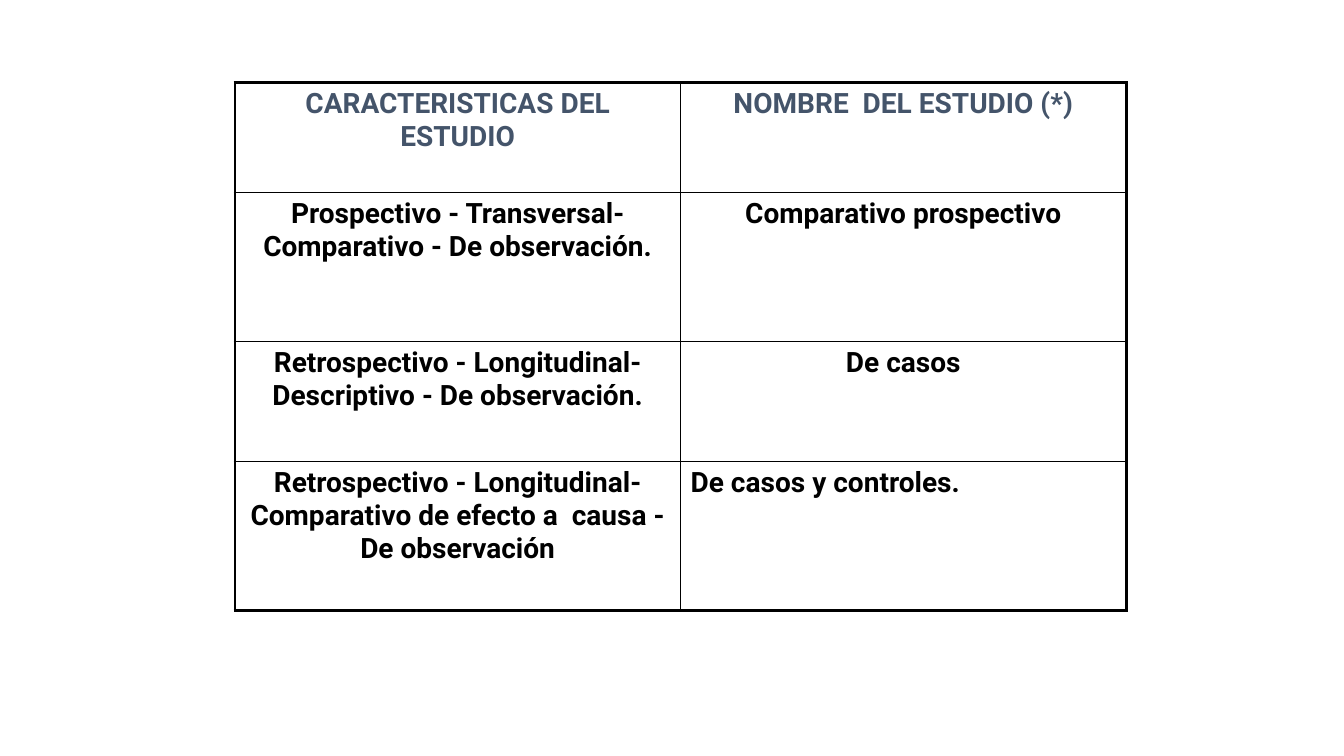
from dataclasses import dataclass

from lxml.etree import SubElement
from pptx import Presentation
from pptx.dml.color import RGBColor
from pptx.enum.text import PP_ALIGN
from pptx.oxml.ns import qn
from pptx.util import Inches, Pt

STUDIES = [
    ("CARACTERISTICAS DEL ESTUDIO", "NOMBRE  DEL ESTUDIO (*)"),
    ("Prospectivo - Transversal-Comparativo - De observación.", "Comparativo prospectivo"),
    ("Retrospectivo - Longitudinal-Descriptivo - De observación.", "De casos"),
    ("Retrospectivo - Longitudinal- Comparativo de efecto a  causa - De observación",
     "De casos y controles."),
]
ROW_HEIGHTS = [1.09, 1.48, 1.19, 1.48]
COLUMN_WIDTH = 4.42
TABLE_LEFT, TABLE_TOP = 2.33, 0.82


@dataclass(frozen=True)
class Theme:
    font: str = "Roboto"
    text_size: float = 20
    header: str = "44546A"
    ink: str = "000000"
    outer_line: float = 2.25
    inner_line: float = 1


THEME = Theme()


def add_border(cell, side, width):
    """Draw one solid cell edge; side is L, R, T or B."""
    line = SubElement(cell._tc.get_or_add_tcPr(), qn(f"a:ln{side}"), w=str(Pt(width)))
    fill = SubElement(line, qn("a:solidFill"))
    SubElement(fill, qn("a:srgbClr"), val=THEME.ink)


def format_cell(cell, row, column):
    last_row, last_column = len(STUDIES) - 1, len(STUDIES[0]) - 1
    outer_edges = {"L": column == 0, "R": column == last_column,
                   "T": row == 0, "B": row == last_row}
    for side, is_outer in outer_edges.items():
        add_border(cell, side, THEME.outer_line if is_outer else THEME.inner_line)
    cell.fill.background()

    paragraph = cell.text_frame.paragraphs[0]
    is_final_cell = (row, column) == (last_row, last_column)
    paragraph.alignment = PP_ALIGN.LEFT if is_final_cell else PP_ALIGN.CENTER
    font = paragraph.font
    font.name, font.size, font.bold = THEME.font, Pt(THEME.text_size), True
    font.color.rgb = RGBColor.from_string(THEME.header if row == 0 else THEME.ink)


def add_study_table(slide):
    column_count = len(STUDIES[0])
    table = slide.shapes.add_table(
        len(STUDIES), column_count, Inches(TABLE_LEFT), Inches(TABLE_TOP),
        Inches(COLUMN_WIDTH * column_count), Inches(sum(ROW_HEIGHTS))).table
    table.first_row = table.horz_banding = False
    for table_row, height in zip(table.rows, ROW_HEIGHTS):
        table_row.height = Inches(height)
    for row, texts in enumerate(STUDIES):
        for column, text in enumerate(texts):
            cell = table.cell(row, column)
            cell.text = text
            format_cell(cell, row, column)


def main():
    presentation = Presentation()
    presentation.slide_width, presentation.slide_height = Inches(13.33), Inches(7.5)
    blank_layout = presentation.slide_layouts.get_by_name("Blank")
    add_study_table(presentation.slides.add_slide(blank_layout))
    presentation.save("out.pptx")


if __name__ == "__main__":
    main()
